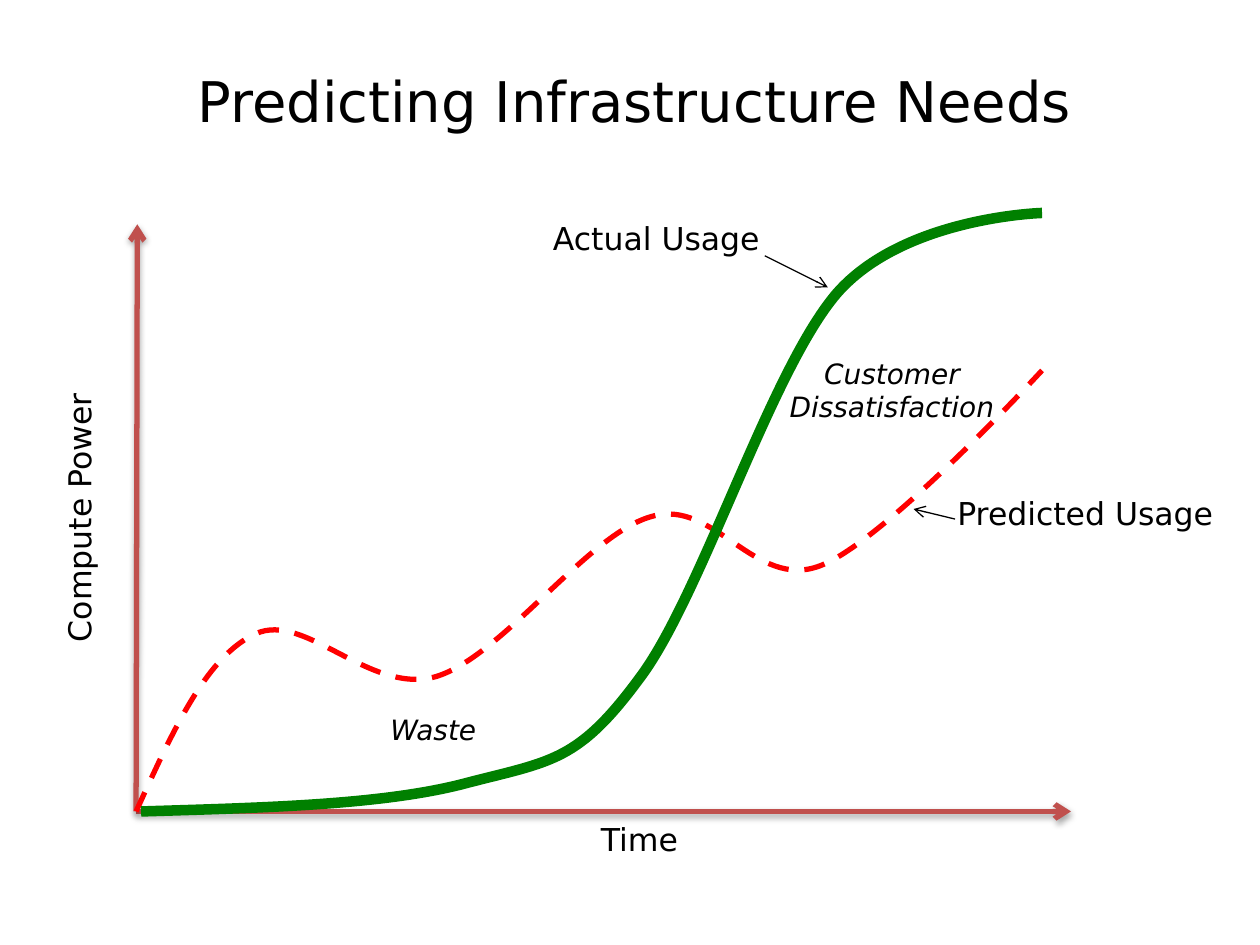
from collections import namedtuple

from lxml.etree import SubElement
from pptx import Presentation
from pptx.dml.color import RGBColor
from pptx.enum.dml import MSO_LINE
from pptx.enum.shapes import MSO_CONNECTOR
from pptx.enum.text import MSO_ANCHOR, MSO_AUTO_SIZE, PP_ALIGN
from pptx.oxml.ns import qn
from pptx.util import Pt

PX = 9144
FONT = "DejaVu Sans"
BLACK = RGBColor(0, 0, 0)
AXIS_RED = RGBColor(0xC0, 0x50, 0x4D)
PREDICTED_RED = RGBColor(0xFF, 0, 0)
ACTUAL_GREEN = RGBColor(0, 0x80, 0)

Box = namedtuple("Box", "left top width height")

PREDICTED = [(0, 475), (28, 414), (55, 352), (95, 334), (134, 316), (186, 383),
             (238, 368), (291, 352), (358, 255), (409, 241), (459, 226), (491, 300),
             (543, 280), (594, 261), (719, 125), (719, 125)]
ACTUAL = [(4, 475), (101, 472), (198, 470), (264, 452), (330, 435), (351, 435),
          (399, 370), (448, 306), (503, 126), (556, 64), (609, 3), (719, 0), (719, 0)]


def write(frame, text, size=18, italic=False, align=PP_ALIGN.LEFT):
    """Put one formatted paragraph into a text frame."""
    paragraph = frame.paragraphs[0]
    paragraph.text = text
    paragraph.alignment = align
    for run in paragraph.runs:
        run.font.name = FONT
        run.font.size = Pt(size)
        run.font.italic = italic
        run.font.color.rgb = BLACK


def place(shape, box):
    """Move and size a shape to a box in px."""
    shape.left, shape.top, shape.width, shape.height = (n * PX for n in box)


def add_label(slide, plot, box, text, rotation=0, **text_format):
    """Add a one-piece label at a box relative to the plot."""
    label = slide.shapes.add_textbox(0, 0, PX, PX)
    place(label, Box(plot.left + box.left, plot.top + box.top, box.width, box.height))
    label.rotation = rotation
    label.text_frame.word_wrap = False
    label.text_frame.auto_size = MSO_AUTO_SIZE.SHAPE_TO_FIT_TEXT
    write(label.text_frame, text, **text_format)


def add_arrow(slide, plot, start, end, color, weight, shadow=False):
    """Add an open-headed arrow between two points of the plot."""
    ends = [(origin + offset) * PX for point in (start, end)
            for origin, offset in zip((plot.left, plot.top), point)]
    arrow = slide.shapes.add_connector(MSO_CONNECTOR.STRAIGHT, *ends)
    arrow.line.color.rgb = color
    arrow.line.width = Pt(weight)
    properties = arrow.element.spPr
    SubElement(properties.find(qn("a:ln")), qn("a:tailEnd"), type="arrow")
    effects = SubElement(properties, qn("a:effectLst"))
    if shadow:
        outer = SubElement(effects, qn("a:outerShdw"), blurRad=str(Pt(3.1)),
                           dist=str(Pt(1.8)), dir="5400000", rotWithShape="0")
        shade = SubElement(outer, qn("a:srgbClr"), val="000000")
        SubElement(shade, qn("a:alpha"), val="35000")


def add_curve(slide, plot, points, color, weight, dash=None):
    """Add a smooth curve through Bezier points of the plot."""
    builder = slide.shapes.build_freeform(*points[0], scale=float(PX))
    builder.add_line_segments(points[1:], close=False)
    curve = builder.convert_to_shape(plot.left * PX, plot.top * PX)
    outline = next(curve.element.iter(qn("a:path")))
    segments = outline.findall(qn("a:lnTo"))
    for first in range(0, len(segments), 3):
        bezier = SubElement(outline, qn("a:cubicBezTo"))
        for segment in segments[first:first + 3]:
            bezier.append(segment[0])
            outline.remove(segment)
    curve.shadow.inherit = False
    curve.fill.background()
    curve.line.color.rgb = color
    curve.line.width = Pt(weight)
    if dash:
        curve.line.dash_style = dash


def add_title(slide, box):
    """Fill the title placeholder."""
    title = slide.shapes.title
    place(title, box)
    frame = title.text_frame
    frame.auto_size = MSO_AUTO_SIZE.NONE
    frame.vertical_anchor = MSO_ANCHOR.TOP
    frame.margin_top = 9 * PX
    frame.margin_bottom = 0
    write(frame, "Predicting Infrastructure Needs", size=32, align=PP_ALIGN.CENTER)


def add_axes(slide, plot):
    """Draw both axes and their names."""
    origin = (0, plot.height)
    for tip in ((plot.width, plot.height), (1, 9)):
        add_arrow(slide, plot, origin, tip, AXIS_RED, 3, shadow=True)
    add_label(slide, plot, Box(-156, 220, 221, 40), "Compute Power", rotation=270)
    add_label(slide, plot, Box(359, 477, 82, 40), "Time")


def add_usage(slide, plot):
    """Draw the usage curves, their callouts and the gaps between them."""
    add_curve(slide, plot, PREDICTED, PREDICTED_RED, 3, MSO_LINE.DASH)
    add_curve(slide, plot, ACTUAL, ACTUAL_GREEN, 6)
    add_label(slide, plot, Box(642, 218, 224, 40), "Predicted Usage")
    add_label(slide, plot, Box(321, 0, 185, 40), "Actual Usage")
    add_arrow(slide, plot, (499, 34), (549, 59), BLACK, 0.75)
    add_arrow(slide, plot, (650, 243), (617, 235), BLACK, 0.75)
    add_label(slide, plot, Box(192, 392, 96, 37), "Waste", size=16, italic=True)
    add_label(slide, plot, Box(505, 109, 190, 64), "Customer\vDissatisfaction",
              size=16, italic=True, align=PP_ALIGN.CENTER)


def main():
    """Build and save the slide."""
    deck = Presentation()
    deck.slide_width, deck.slide_height = 1000 * PX, 750 * PX
    slide = deck.slides.add_slide(deck.slide_layouts[5])
    plot = Box(108, 169, 742, 475)
    add_title(slide, Box(58, 44, 892, 56))
    add_axes(slide, plot)
    add_usage(slide, plot)
    deck.save("out.pptx")


if __name__ == "__main__":
    main()
